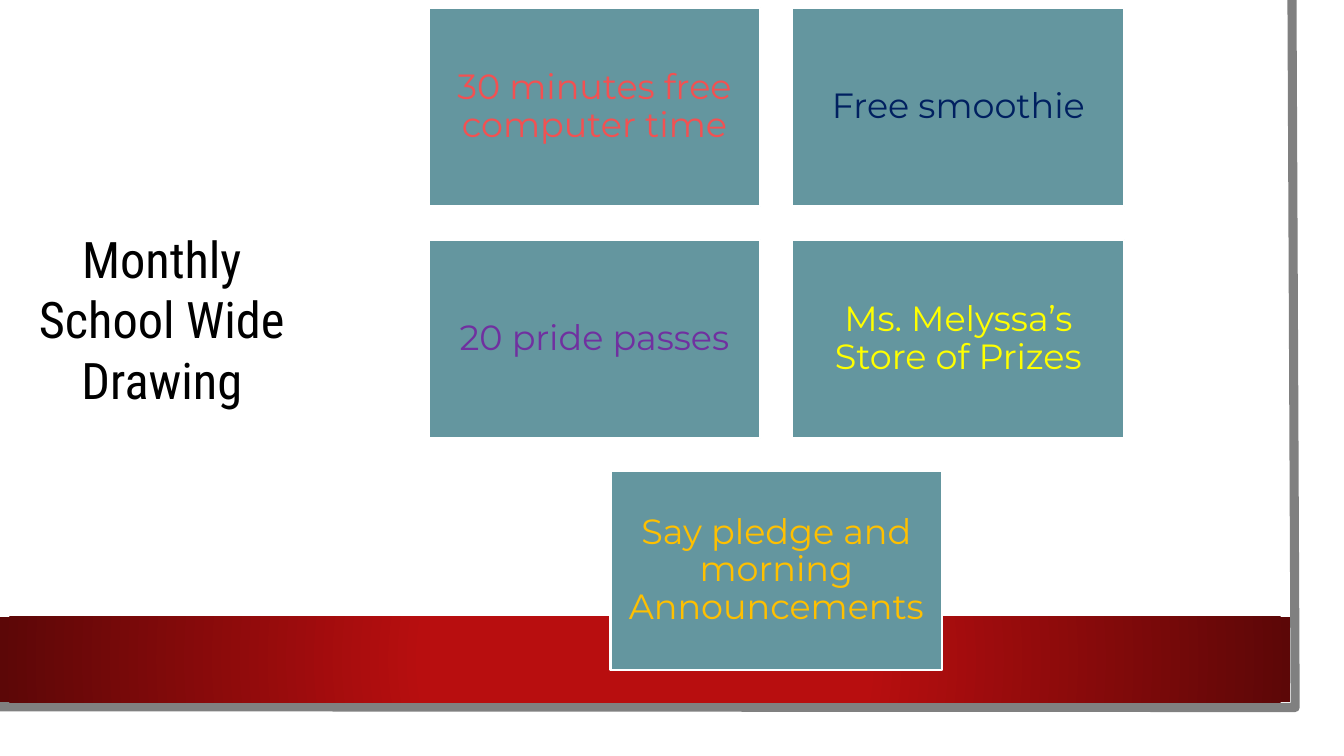
from lxml import etree
from pptx import Presentation
from pptx.dml.color import RGBColor
from pptx.enum.shapes import MSO_SHAPE as Preset
from pptx.enum.text import MSO_ANCHOR as Anchor, MSO_AUTO_SIZE as AutoSize, PP_ALIGN as Align
from pptx.oxml.ns import qn
from pptx.util import Cm, Pt

BLACK = RGBColor(0x00, 0x00, 0x00)
WHITE = RGBColor(0xFF, 0xFF, 0xFF)
GRAY = RGBColor(0x80, 0x80, 0x80)
RED = RGBColor(0xB8, 0x0E, 0x0F)
DARK_RED = RGBColor(0x5C, 0x07, 0x07)
TEAL = RGBColor(0x64, 0x96, 0x9F)
CORAL = RGBColor(0xF2, 0x51, 0x52)
NAVY = RGBColor(0x00, 0x20, 0x60)
PURPLE = RGBColor(0x70, 0x30, 0xA0)
YELLOW = RGBColor(0xFF, 0xFF, 0x00)
GOLD = RGBColor(0xFF, 0xC0, 0x00)

TILE_WIDTH, TILE_HEIGHT = 8.36, 5
COLUMN_STEP, ROW_STEP = 9.17, 5.84
GRID_LEFT, GRID_TOP = 10.8, 0.2

PRIZES = [
    ("30 minutes free computer time", CORAL, 0, 0),
    ("Free smoothie", NAVY, 1, 0),
    ("20 pride passes", PURPLE, 0, 1),
    ("Ms. Melyssa’s Store of Prizes", YELLOW, 1, 1),
    ("Say pledge and morning Announcements", GOLD, 0.5, 2),
]


def set_values(target, values):
    for name, value in values.items():
        setattr(target, name, value)


def write_text(shape, text, frame_values, paragraph_values, font_values, color):
    frame = shape.text_frame
    frame.text = text
    set_values(frame, frame_values)
    paragraph = frame.paragraphs[0]
    set_values(paragraph, paragraph_values)
    set_values(paragraph.font, font_values)
    paragraph.font.color.rgb = color


presentation = Presentation()
presentation.slide_width = Cm(33.87)
presentation.slide_height = Cm(19.05)
slide = presentation.slides.add_slide(presentation.slide_layouts[5])

title = slide.shapes.title
set_values(title, {"left": Cm(0.69), "top": Cm(5.61), "width": Cm(6.78), "height": Cm(6.4)})
write_text(
    title,
    "Monthly School Wide Drawing",
    {"word_wrap": True, "vertical_anchor": Anchor.TOP, "auto_size": AutoSize.SHAPE_TO_FIT_TEXT},
    {"alignment": Align.CENTER},
    {"name": "Roboto Condensed", "size": Pt(36)},
    BLACK,
)

outline = slide.shapes.build_freeform(Cm(32.56), Cm(0))
outline.add_line_segments([(Cm(32.64), Cm(17.83)), (Cm(-0.08), Cm(17.81))], close=False)
page_edge = outline.convert_to_shape()
page_edge.shadow.inherit = False
page_edge.fill.background()
page_edge.line.color.rgb = GRAY
page_edge.line.width = Pt(6.5)

band = slide.shapes.add_shape(Preset.RECTANGLE, Cm(0), Cm(15.54), Cm(32.51), Cm(2.16))
band.shadow.inherit = False
band.line.fill.background()
band.fill.gradient()
for stop, (position, color) in zip(band.fill.gradient_stops, [(0.34, RED), (1, DARK_RED)]):
    stop.position = position
    stop.color.rgb = color
gradient = band._element.spPr.find(qn("a:gradFill"))
linear = gradient.find(qn("a:lin"))
radial = etree.Element(qn("a:path"), {"path": "circle"})
etree.SubElement(radial, qn("a:fillToRect"), {side: "50000" for side in "ltrb"})
gradient.replace(linear, radial)

for prize, color, column, row in PRIZES:
    tile = slide.shapes.add_shape(
        Preset.RECTANGLE,
        Cm(GRID_LEFT + column * COLUMN_STEP),
        Cm(GRID_TOP + row * ROW_STEP),
        Cm(TILE_WIDTH),
        Cm(TILE_HEIGHT),
    )
    tile.shadow.inherit = False
    tile.fill.solid()
    tile.fill.fore_color.rgb = TEAL
    tile.line.color.rgb = WHITE
    tile.line.width = Pt(1.5)
    margins = {f"margin_{side}": Cm(0.25) for side in ("left", "top", "right", "bottom")}
    write_text(
        tile,
        prize,
        {"word_wrap": True, "vertical_anchor": Anchor.MIDDLE, **margins},
        {"alignment": Align.CENTER, "line_spacing": 0.9},
        {"name": "Montserrat", "size": Pt(25)},
        color,
    )

presentation.save("out.pptx")
